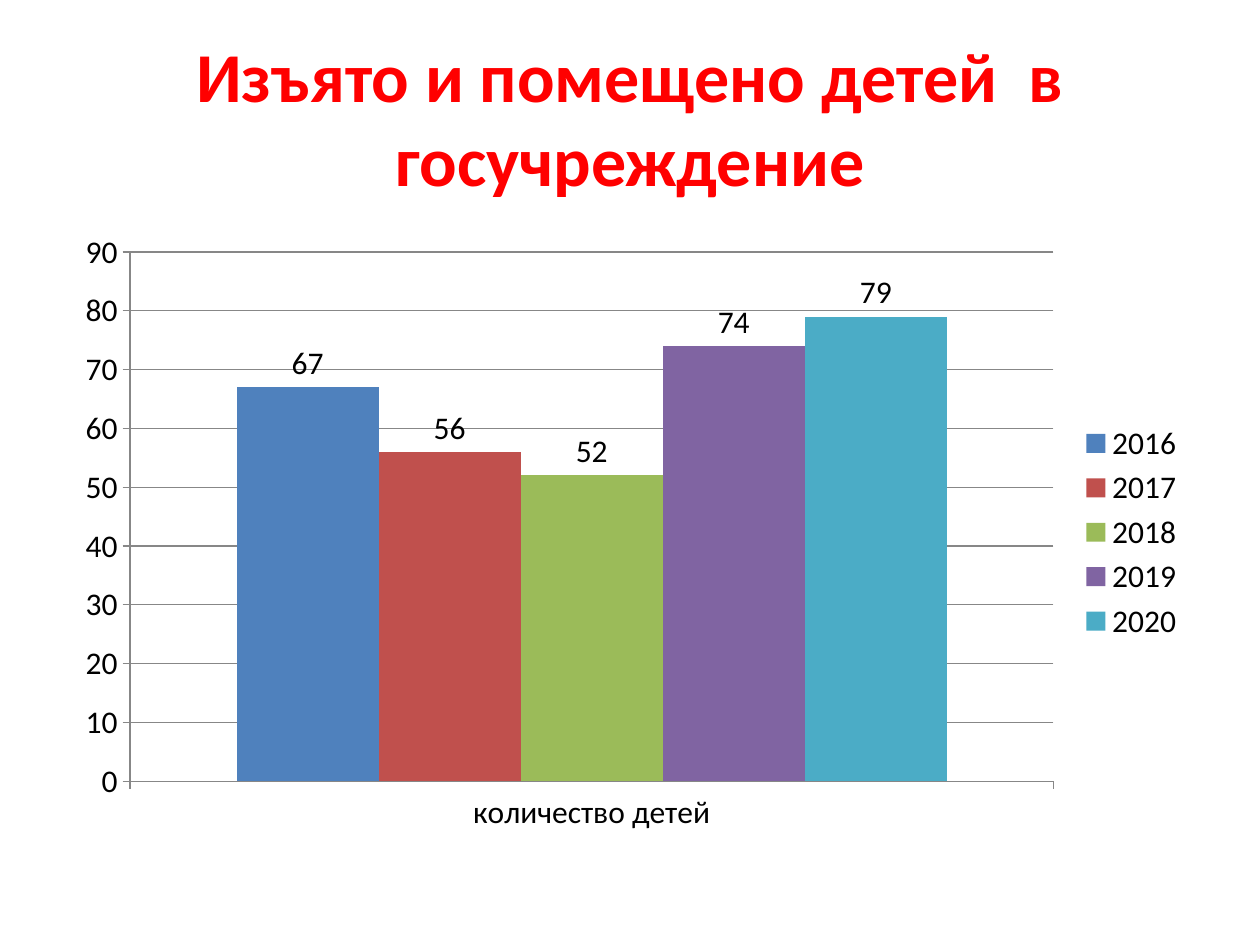
from dataclasses import dataclass

from pptx import Presentation
from pptx.chart.data import CategoryChartData
from pptx.dml.color import RGBColor
from pptx.enum.chart import XL_CHART_TYPE, XL_LABEL_POSITION, XL_LEGEND_POSITION, XL_TICK_MARK
from pptx.enum.text import MSO_ANCHOR, PP_ALIGN
from pptx.util import Inches, Pt

COLUMNS = XL_CHART_TYPE.COLUMN_CLUSTERED
LABEL_ABOVE = XL_LABEL_POSITION.OUTSIDE_END
LEGEND_RIGHT = XL_LEGEND_POSITION.RIGHT
TICK_OUT = XL_TICK_MARK.OUTSIDE
TICK_NONE = XL_TICK_MARK.NONE
MIDDLE = MSO_ANCHOR.MIDDLE
CENTER = PP_ALIGN.CENTER


@dataclass(frozen=True)
class Theme:
    font: str = "Calibri"
    title_size: int = 40
    chart_size: int = 18
    title: str = "FF0000"
    text: str = "000000"
    axis: str = "878787"
    series: tuple = ("4F81BD", "C0504D", "9BBB59", "8064A2", "4BACC6")


THEME = Theme()
CHILDREN_BY_YEAR = {"2016": 67, "2017": 56, "2018": 52, "2019": 74, "2020": 79}


def format_font(font, size, color, bold=False):
    font.name = THEME.font
    font.size = Pt(size)
    font.bold = bold
    font.color.rgb = RGBColor.from_string(color)


def write_text(box, text, *, size, color, bold=False, align=CENTER, anchor=MIDDLE):
    frame = box.text_frame
    frame.word_wrap = True
    frame.vertical_anchor = anchor
    para = frame.paragraphs[0]
    para.alignment = align
    span = para.add_run()
    span.text = text
    format_font(span.font, size, color, bold)


def add_title(page, text):
    box = page.shapes.title
    box.left, box.top = Inches(0.5), Inches(0.3)
    box.width, box.height = Inches(9), Inches(1.25)
    write_text(box, text, size=THEME.title_size, color=THEME.title, bold=True)


def format_line(line):
    line.width = Pt(0.75)
    line.color.rgb = RGBColor.from_string(THEME.axis)


def format_axes(chart):
    for axis in (chart.category_axis, chart.value_axis):
        axis.major_tick_mark = TICK_OUT
        axis.minor_tick_mark = TICK_NONE
        format_line(axis.format.line)
    scale = chart.value_axis
    scale.minimum_scale, scale.maximum_scale, scale.major_unit = 0, 90, 10
    scale.has_major_gridlines = True
    format_line(scale.major_gridlines.format.line)


def format_columns(plot):
    plot.gap_width = 150
    plot.overlap = 0
    plot.vary_by_categories = False
    for series, color in zip(plot.series, THEME.series):
        series.format.fill.solid()
        series.format.fill.fore_color.rgb = RGBColor.from_string(color)
        labels = series.data_labels
        labels.show_value = True
        labels.position = LABEL_ABOVE


def add_column_chart(page, category, values):
    data = CategoryChartData()
    data.categories = [category]
    for name, value in values.items():
        data.add_series(name, [value])
    chart = page.shapes.add_chart(
        COLUMNS, Inches(0.5), Inches(1.75), Inches(9), Inches(4.95), data
    ).chart
    format_font(chart.font, THEME.chart_size, THEME.text)
    chart.has_title = False
    chart.has_legend = True
    chart.legend.position = LEGEND_RIGHT
    chart.legend.include_in_layout = False
    format_axes(chart)
    format_columns(chart.plots[0])


def main():
    deck = Presentation()
    deck.slide_width, deck.slide_height = Inches(10), Inches(7.5)
    page = deck.slides.add_slide(deck.slide_layouts.get_by_name("Title Only"))

    # Heading
    add_title(page, "Изъято и помещено детей  в госучреждение")

    # Children per year
    add_column_chart(page, "количество детей", CHILDREN_BY_YEAR)

    deck.save("out.pptx")


if __name__ == "__main__":
    main()
